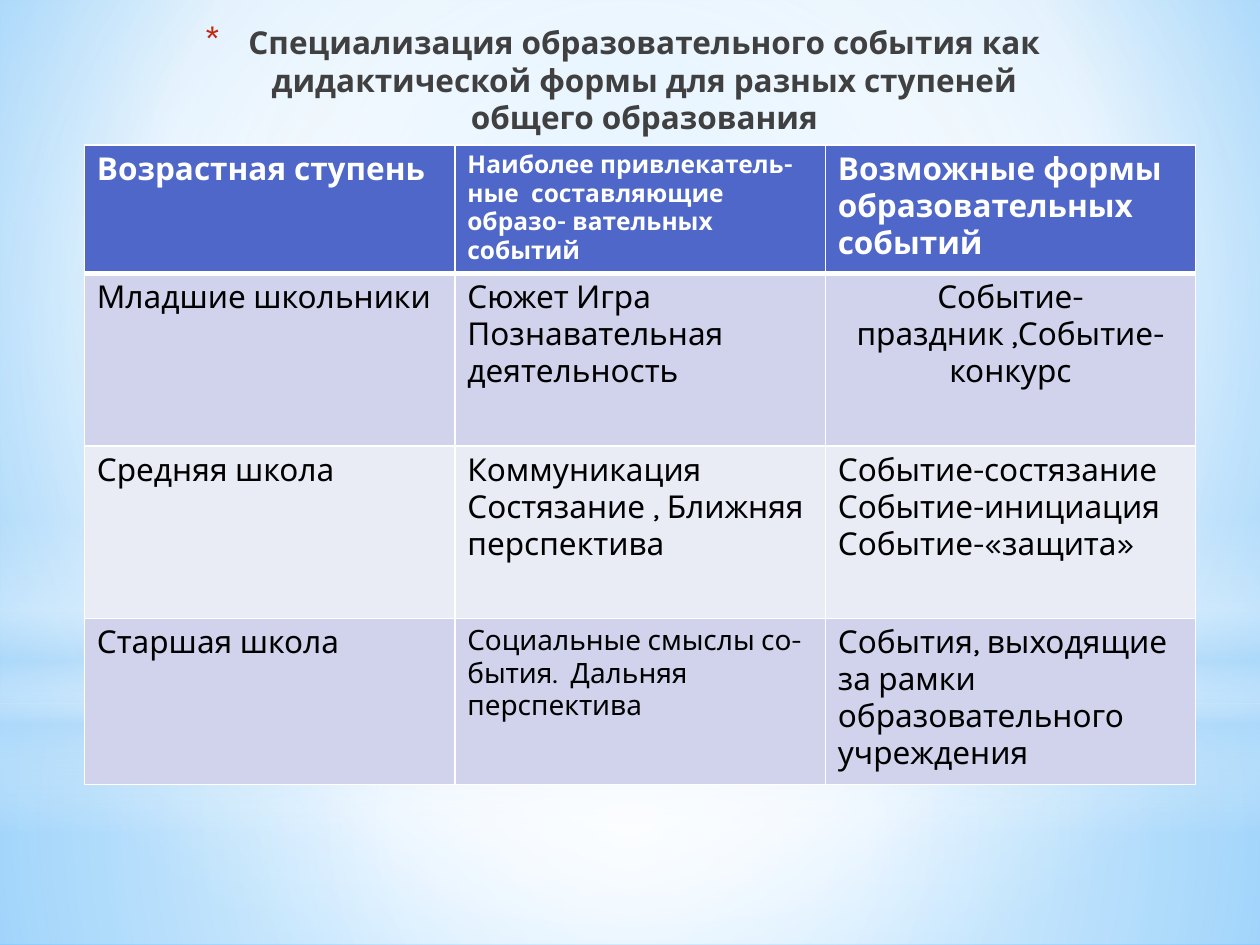
from dataclasses import dataclass
from typing import NamedTuple

from lxml import etree
from pptx import Presentation
from pptx.dml.color import RGBColor
from pptx.enum.shapes import MSO_SHAPE
from pptx.enum.text import MSO_ANCHOR, MSO_AUTO_SIZE, PP_ALIGN
from pptx.oxml.ns import qn
from pptx.util import Pt

RECTANGLE, OVAL = MSO_SHAPE.RECTANGLE, MSO_SHAPE.OVAL
LEFT, CENTER = PP_ALIGN.LEFT, PP_ALIGN.CENTER
TOP, NO_FIT = MSO_ANCHOR.TOP, MSO_AUTO_SIZE.NONE


@dataclass(frozen=True)
class Theme:
    font: str = "Karla"
    title: str = "404040"
    bullet: str = "C3260C"
    white: str = "FFFFFF"
    black: str = "000000"
    sky: str = "B4DCFA"
    header: str = "4E67C8"
    bands: tuple = ("D0D3EB", "E9EBF5")
    normal: int = 18
    medium: int = 16
    small: int = 14


THEME = Theme()


class Stop(NamedTuple):
    position: int
    color: str
    opacity: int = 100


class Gradient(NamedTuple):
    stops: list[Stop]
    focus: tuple | None = (50, 50, 50, 50)  # None: runs from top to bottom


class Layer(NamedTuple):
    preset: int
    top: float
    height: float
    gradient: Gradient


class Entry(NamedTuple):
    text: str
    size: int = THEME.normal
    align: PP_ALIGN = LEFT


W, S = THEME.white, THEME.sky
BACKDROP = Gradient([Stop(0, "9ED5FF"), Stop(60, W), Stop(100, "5BB9FF")], (20, 10, 20, 60))
LAYERS = [
    Layer(RECTANGLE, 402, 138, Gradient([Stop(0, W, 91), Stop(37, W, 76), Stop(100, S, 79)])),
    Layer(RECTANGLE, 0, 402, Gradient([Stop(0, W, 89), Stop(48, W, 62), Stop(100, S, 79)])),
    Layer(RECTANGLE, 296.5, 180, Gradient(
        [Stop(0, W, 0), Stop(29, W, 30), Stop(45, S, 40), Stop(55, W, 26),
         Stop(65, S, 60), Stop(100, W, 0)], None)),
    Layer(OVAL, 126, 402, Gradient([Stop(0, W), Stop(56, W, 0)])),
]

TITLE = ("Специализация образовательного события как дидактической формы "
         "для разных ступеней общего образования")
ROWS = [
    [Entry("Возрастная ступень"),
     Entry("Наиболее привлекатель- ные  составляющие образо- вательных событий", THEME.small),
     Entry("Возможные формы образовательных событий")],
    [Entry("Младшие школьники"),
     Entry("Сюжет Игра Познавательная деятельность"),
     Entry("Событие-праздник ,Событие-конкурс", align=CENTER)],
    [Entry("Средняя школа"),
     Entry("Коммуникация Состязание , Ближняя перспектива"),
     Entry("Событие-состязание Событие-инициация Событие-«защита»")],
    [Entry("Старшая школа"),
     Entry("Социальные смыслы со- бытия.  Дальняя перспектива", THEME.medium),
     Entry("События, выходящие за рамки образовательного учреждения")],
]
ROW_HEIGHTS = [73.4, 98.6, 98.6, 95]
COLUMN_WIDTH = 211.7


def add(parent, tag: str, **attributes):
    return etree.SubElement(parent, qn(tag), {k: str(v) for k, v in attributes.items()})


def paint(fill, owner, gradient: Gradient) -> None:
    """Give the fill its stops and its circular or vertical course."""
    fill.gradient()
    node = owner.find(".//" + qn("a:gradFill"))
    for child in list(node):
        node.remove(child)
    stops = add(node, "a:gsLst")
    for stop in gradient.stops:
        color = add(add(stops, "a:gs", pos=stop.position * 1000), "a:srgbClr", val=stop.color)
        if stop.opacity < 100:
            add(color, "a:alpha", val=stop.opacity * 1000)
    if gradient.focus:
        sides = {side: value * 1000 for side, value in zip("ltrb", gradient.focus)}
        add(add(node, "a:path", path="circle"), "a:fillToRect", **sides)
    else:
        add(node, "a:lin", ang=90 * 60000, scaled=0)


def add_layer(page, layer: Layer) -> None:
    shape = page.shapes.add_shape(layer.preset, 0, Pt(layer.top), Pt(720), Pt(layer.height))
    shape.shadow.inherit = False
    shape.line.fill.background()
    paint(shape.fill, shape.element, layer.gradient)


def style(para, size: int, color: str, bold: bool, align: PP_ALIGN) -> None:
    para.alignment = align
    font = para.font
    font.name, font.size, font.bold = THEME.font, Pt(size), bold
    font.color.rgb = RGBColor.from_string(color)


def set_title(page) -> None:
    title = page.shapes.title
    title.left, title.top, title.width, title.height = Pt(99.4), Pt(9.4), Pt(512.6), Pt(90)
    frame = title.text_frame
    frame.text = TITLE
    frame.word_wrap, frame.auto_size, frame.vertical_anchor = True, NO_FIT, TOP
    para = frame.paragraphs[0]
    style(para, THEME.normal, THEME.title, True, CENTER)
    # Hanging asterisk bullet, placed before the default run properties
    properties = para._p.get_or_add_pPr()
    properties.set("marL", str(Pt(25.2)))
    properties.set("indent", str(-Pt(25.2)))
    defaults = properties.find(qn("a:defRPr"))
    add(add(properties, "a:buClr"), "a:srgbClr", val=THEME.bullet)
    add(properties, "a:buSzPct", val=128000)
    add(properties, "a:buFont", typeface=THEME.font)
    add(properties, "a:buChar", char="*")
    properties.append(defaults)
    # Bring the title in front of the layers
    page.shapes.element.append(title.element)


def set_borders(cell, widths: dict[str, int]) -> None:
    properties = cell._tc.get_or_add_tcPr()
    for index, (side, width) in enumerate(widths.items()):
        line = add(properties, f"a:ln{side}", w=Pt(width))
        add(add(line, "a:solidFill"), "a:srgbClr", val=THEME.white)
        properties.insert(index, line)


def add_stage_table(page) -> None:
    frame = page.shapes.add_table(len(ROWS), len(ROWS[0]), Pt(48.2), Pt(82.8),
                                  Pt(COLUMN_WIDTH * len(ROWS[0])), Pt(sum(ROW_HEIGHTS)))
    table = frame.table
    for column in table.columns:
        column.width = Pt(COLUMN_WIDTH)
    for r, entries in enumerate(ROWS):
        table.rows[r].height = Pt(ROW_HEIGHTS[r])
        heading = r == 0
        fill = THEME.header if heading else THEME.bands[(r - 1) % 2]
        borders = {"L": 1, "R": 1, "T": 3 if r == 1 else 1, "B": 3 if heading else 1}
        for c, entry in enumerate(entries):
            cell = table.cell(r, c)
            cell.text = entry.text
            cell.fill.solid()
            cell.fill.fore_color.rgb = RGBColor.from_string(fill)
            set_borders(cell, borders)
            color = THEME.white if heading else THEME.black
            style(cell.text_frame.paragraphs[0], entry.size, color, heading, entry.align)


def main() -> None:
    deck = Presentation()
    deck.slide_width, deck.slide_height = Pt(720), Pt(540)
    page = deck.slides.add_slide(deck.slide_layouts[5])
    # Sky background and its soft layers
    paint(page.background.fill, page.element, BACKDROP)
    for layer in LAYERS:
        add_layer(page, layer)
    # Heading and table
    set_title(page)
    add_stage_table(page)
    deck.save("out.pptx")


if __name__ == "__main__":
    main()
